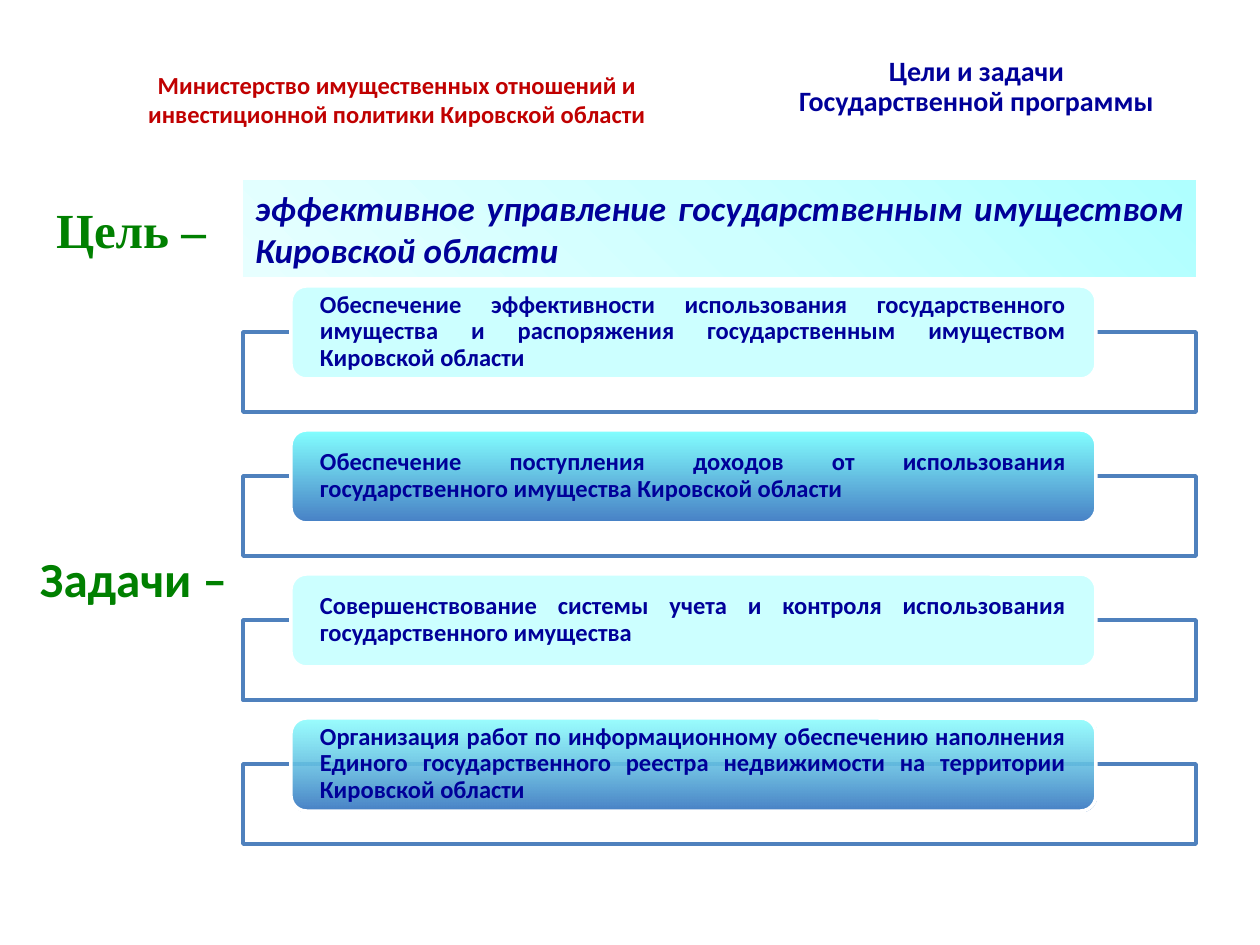
from lxml import etree
from pptx import Presentation
from pptx.dml.color import RGBColor
from pptx.enum.shapes import MSO_SHAPE
from pptx.enum.text import MSO_ANCHOR, PP_ALIGN
from pptx.oxml.ns import qn
from pptx.util import Emu, Pt

RECTANGLE, ROUNDED = MSO_SHAPE.RECTANGLE, MSO_SHAPE.ROUNDED_RECTANGLE
CENTER, JUSTIFY, LEFT = PP_ALIGN.CENTER, PP_ALIGN.JUSTIFY, PP_ALIGN.LEFT
TOP, MIDDLE = MSO_ANCHOR.TOP, MSO_ANCHOR.MIDDLE

EMU_PER_PX = 914400 / 126
NAVY, RED, GREEN = "000099", "C00000", "008000"
BLUE, WHITE, PALE = "4F81BD", "FFFFFF", "CCFFFF"
GOAL_STOPS = [(0, "AFFFFF", 100), (50, "CEFFFF", 100), (100, "E7FFFF", 100)]

TASK_TOP, TASK_PITCH = 332, 144
TASKS = [
    ("Обеспечение эффективности использования государственного имущества "
     "и распоряжения государственным имуществом Кировской области", None),
    ("Обеспечение поступления доходов от использования "
     "государственного имущества Кировской области", 100),
    ("Совершенствование системы учета и контроля использования "
     "государственного имущества", None),
    ("Организация работ по информационному обеспечению наполнения "
     "Единого государственного реестра недвижимости на территории "
     "Кировской области", 80),
]


def px(length):
    return Emu(round(length * EMU_PER_PX))


def color(value):
    return RGBColor.from_string(value)


def apply(target, values):
    for name, value in values.items():
        setattr(target, name, value)


def set_alpha(color_element, percent):
    if percent < 100:
        etree.SubElement(color_element, qn("a:alpha"), val=str(percent * 1000))


class SlideBuilder:
    def __init__(self, page):
        self.page = page
        self.font = {"name": "Calibri", "bold": True}

    def add_lines(self, box, lines, size, ink, align=LEFT, anchor=TOP,
                  insets=(12, 6, 12, 6), spacing=1.0, **font):
        frame = box.text_frame
        left, top, right, bottom = map(px, insets)
        apply(frame, {"word_wrap": True, "vertical_anchor": anchor,
                      "margin_left": left, "margin_top": top,
                      "margin_right": right, "margin_bottom": bottom})
        for index, line in enumerate(lines):
            para = frame.add_paragraph() if index else frame.paragraphs[0]
            apply(para, {"alignment": align, "line_spacing": spacing})
            span = para.add_run()
            span.text = line
            apply(span.font, {**self.font, "size": Pt(size), **font})
            span.font.color.rgb = color(ink)

    def text(self, bounds, lines, size, ink, **style):
        box = self.page.shapes.add_textbox(*map(px, bounds))
        self.add_lines(box, lines, size, ink, **style)

    def shape(self, kind, bounds, line=None):
        shape = self.page.shapes.add_shape(kind, *map(px, bounds))
        shape.shadow.inherit = False
        if line:
            shape.line.color.rgb = color(line)
            shape.line.width = Pt(2)
        else:
            shape.line.fill.background()
        return shape

    def solid(self, shape, value, alpha=100):
        shape.fill.solid()
        shape.fill.fore_color.rgb = color(value)
        set_alpha(shape.element.spPr.find(qn("a:solidFill"))[0], alpha)

    def gradient(self, shape, stops, angle):
        shape.fill.gradient()
        shape.fill.gradient_angle = 360 - angle
        stop_list = shape.element.spPr.find(".//" + qn("a:gsLst"))
        for old in list(stop_list):
            stop_list.remove(old)
        for position, value, alpha in stops:
            stop = etree.SubElement(stop_list, qn("a:gs"), pos=str(position * 1000))
            set_alpha(etree.SubElement(stop, qn("a:srgbClr"), val=value), alpha)

    def task(self, top, wording, gradient_alpha):
        frame = self.shape(RECTANGLE, (243, top, 953, 80), BLUE)
        self.solid(frame, WHITE, 90)
        plate = self.shape(ROUNDED, (291, top - 46, 805, 93), WHITE)
        if gradient_alpha is None:
            self.solid(plate, PALE)
        else:
            stops = [(0, "83FFFF", gradient_alpha), (100, "4780C5", 100)]
            self.gradient(plate, stops, 90)
        self.text((295, top - 42, 796, 84), [wording], 14, NAVY, align=JUSTIFY,
                  anchor=MIDDLE, insets=(25, 0, 25, 0), spacing=0.9)


def main():
    deck = Presentation()
    deck.slide_width, deck.slide_height = px(1260), px(945)
    builder = SlideBuilder(deck.slides.add_slide(deck.slide_layouts[6]))

    builder.text((727, 20, 499, 140), ["Цели и задачи", "Государственной программы"],
                 16, NAVY, align=CENTER, insets=(12, 37, 12, 6), spacing=0.9)
    builder.text((44, 193, 218, 72), ["Цель –"], 28, GREEN, name="Times New Roman")
    goal = builder.shape(RECTANGLE, (243, 180, 953, 97))
    builder.gradient(goal, GOAL_STOPS, 135)
    builder.add_lines(goal, ["эффективное управление государственным имуществом Кировской области"],
                      20, NAVY, align=JUSTIFY, italic=True)
    builder.text((25, 542, 228, 72), ["Задачи – "], 28, GREEN, align=CENTER)
    for index, (wording, gradient_alpha) in enumerate(TASKS):
        builder.task(TASK_TOP + index * TASK_PITCH, wording, gradient_alpha)
    builder.text((131, 38, 532, 122),
                 ["Министерство имущественных отношений и "
                  "инвестиционной политики Кировской области"],
                 14, RED, align=CENTER, anchor=MIDDLE)

    deck.save("out.pptx")


if __name__ == "__main__":
    main()
